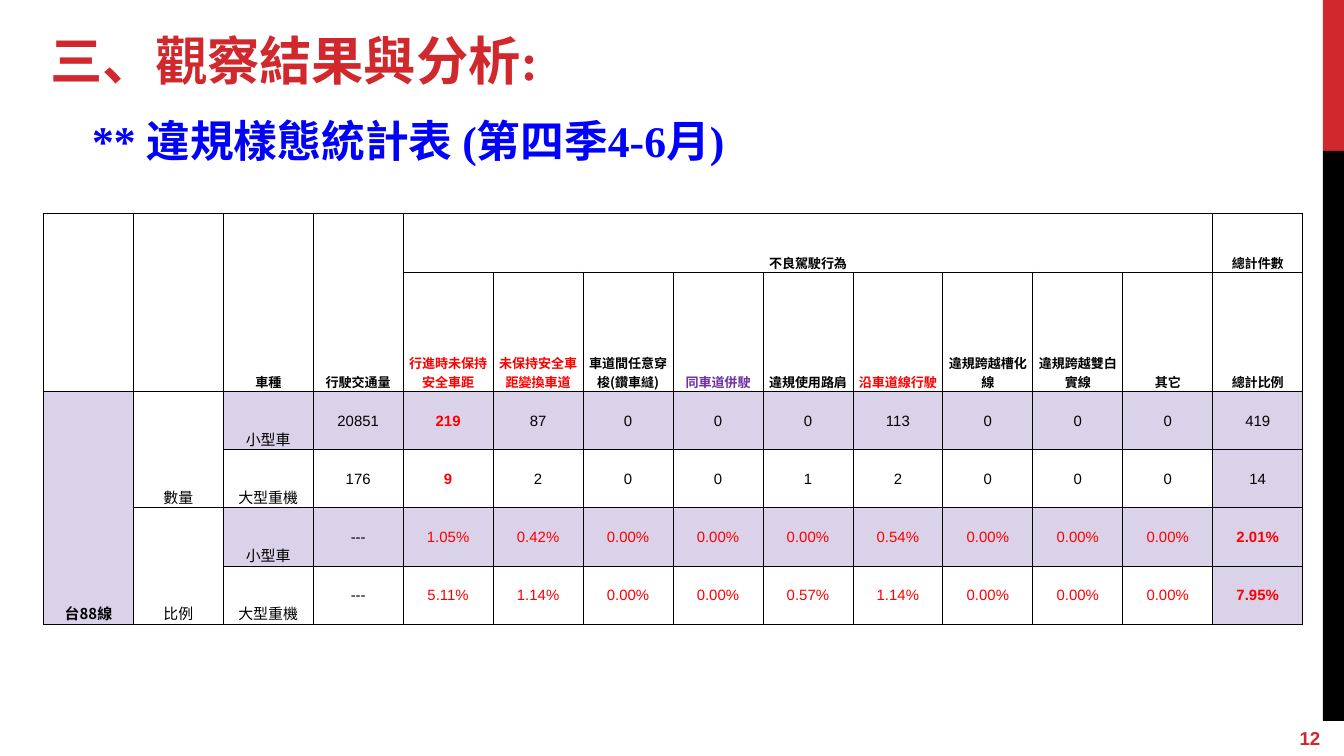
import pptx
import pptx.dml.color
import pptx.enum.shapes
import pptx.enum.text
import pptx.oxml
import pptx.oxml.ns
import pptx.util
from lxml import etree

Cm = pptx.util.Cm
Pt = pptx.util.Pt
Align = pptx.enum.text.PP_ALIGN
Anchor = pptx.enum.text.MSO_ANCHOR
qn = pptx.oxml.ns.qn

RED, BLUE, BLACK, WHITE = "D1282E", "0000FF", "000000", "FFFFFF"
ALERT, PURPLE, LILAC = "FF0000", "7030A0", "D9D2E9"
HAN, SERIF, SANS = "Noto Sans CJK TC", "Times New Roman", "Arial"

HEADS = [
    ["", "", "車種", "行駛交通量", "不良駕駛行為"] + [""] * 8 + ["總計件數"],
    [""] * 4 + ["行進時未保持安全車距", "未保持安全車距變換車道",
                "車道間任意穿梭(鑽車縫)", "同車道併駛", "違規使用路肩",
                "沿車道線行駛", "違規跨越槽化線", "違規跨越雙白實線",
                "其它", "總計比例"],
]
BODY = [
    ["台88線", "數量", "小型車"] + "20851 219 87 0 0 0 113 0 0 0 419".split(),
    ["", "", "大型重機"] + "176 9 2 0 0 1 2 0 0 0 14".split(),
    ["", "比例", "小型車"]
    + "--- 1.05% 0.42% 0.00% 0.00% 0.00% 0.54% 0.00% 0.00% 0.00% 2.01%".split(),
    ["", "", "大型重機"]
    + "--- 5.11% 1.14% 0.00% 0.00% 0.57% 1.14% 0.00% 0.00% 0.00% 7.95%".split(),
]
SPANS = [(0, c, 1, c) for c in range(4)] + [
    (0, 4, 0, 12), (2, 0, 5, 0), (2, 1, 3, 1), (4, 1, 5, 1)]
TINTS = {4: ALERT, 5: ALERT, 7: PURPLE, 9: ALERT}
LAST = 13


def shade(code):
    return pptx.dml.color.RGBColor.from_string(code)


def write(frame, text, size=8, font=HAN, color=BLACK, bold=False,
          align=Align.LEFT):
    para = frame.paragraphs[0]
    para.alignment = align
    run = para.add_run()
    run.text = text
    run.font.size = Pt(size)
    run.font.name = font
    run.font.bold = bold
    run.font.color.rgb = shade(color)
    east = etree.SubElement(run.font._element, qn("a:ea"))
    east.set("typeface", HAN)
    return para


def edge(cell):
    props = cell._tc.get_or_add_tcPr()
    for side in "LRTB":
        line = etree.SubElement(props, qn(f"a:ln{side}"), w=str(Pt(0.5)))
        fill = etree.SubElement(line, qn("a:solidFill"))
        etree.SubElement(fill, qn("a:srgbClr"), val=BLACK)


def style(row, col):
    if row < 2:
        color = TINTS.get(col, BLACK) if row else BLACK
        return dict(size=7, bold=True, color=color)
    count = row < 4
    key = col == (4 if count else LAST)
    red = col == 4 or (not count and col > 3)
    return dict(font=SANS if col > 2 else HAN, bold=key or col == 0,
                color=ALERT if red else BLACK)


def tinted(row, col):
    return row > 1 and (col in (0, LAST) or (row % 2 == 0 and col > 1))


class Deck:
    def __init__(self, wide, high):
        self.file = pptx.Presentation()
        self.file.slide_width = Cm(wide)
        self.file.slide_height = Cm(high)
        self.slide = self.file.slides.add_slide(self.file.slide_layouts[5])

    def frame(self, shape, anchor=Anchor.TOP):
        frame = shape.text_frame
        frame.word_wrap = True
        frame.auto_size = pptx.enum.text.MSO_AUTO_SIZE.NONE
        frame.vertical_anchor = anchor
        frame.margin_left = frame.margin_right = Cm(0.25)
        frame.margin_top = frame.margin_bottom = Cm(0.25)
        return frame

    def title(self, text, x, y, w, h, **form):
        shape = self.slide.shapes.title
        shape.left, shape.top = Cm(x), Cm(y)
        shape.width, shape.height = Cm(w), Cm(h)
        write(self.frame(shape), text, **form)

    def label(self, text, x, y, w, h, **form):
        shape = self.slide.shapes.add_textbox(Cm(x), Cm(y), Cm(w), Cm(h))
        return write(self.frame(shape), text, **form)

    def block(self, x, y, w, h, fill):
        shape = self.slide.shapes.add_shape(
            pptx.enum.shapes.MSO_SHAPE.RECTANGLE, Cm(x), Cm(y), Cm(w), Cm(h))
        shape.shadow.inherit = False
        shape.fill.solid()
        shape.fill.fore_color.rgb = shade(fill)
        shape.line.fill.background()
        return shape

    def table(self, data, x, y, wide, highs):
        cols = len(data[0])
        table = self.slide.shapes.add_table(
            len(data), cols, Cm(x), Cm(y), Cm(wide * cols),
            Cm(sum(highs))).table
        table.first_row = table.horz_banding = False
        for col in table.columns:
            col.width = Cm(wide)
        for row, high in zip(table.rows, highs):
            row.height = Cm(high)
        for r, line in enumerate(data):
            for c, text in enumerate(line):
                self.cell(table.cell(r, c), text, r, c)
        for top, left, low, right in SPANS:
            table.cell(top, left).merge(table.cell(low, right))

    def cell(self, cell, text, row, col):
        edge(cell)
        cell.fill.solid()
        cell.fill.fore_color.rgb = shade(LILAC if tinted(row, col) else WHITE)
        cell.margin_left = cell.margin_right = cell.margin_top = Cm(0.02)
        cell.margin_bottom = 0
        number = row > 1 and col > 2
        cell.vertical_anchor = Anchor.MIDDLE if number else Anchor.BOTTOM
        if text:
            write(cell.text_frame, text, align=Align.CENTER, **style(row, col))


def main():
    deck = Deck(25.4, 14.28)
    deck.block(25, 0, 0.4, 2.85, RED)
    deck.block(25, 2.85, 0.4, 10.77, BLACK)
    page = deck.block(24.31, 13.62, 1.09, 0.66, WHITE)
    write(deck.frame(page, Anchor.MIDDLE), "12", size=10, font=SANS,
          color=RED, bold=True)
    para = deck.label("** 違規樣態統計表 (第四季4-6月)", 0.66, 1.9, 23.67, 1.6,
                      size=23.4, font=SERIF, color=BLUE, bold=True)
    para._p.get_or_add_pPr().set("marL", str(Cm(0.83)))
    deck.title("三、觀察結果與分析:", 0.71, 0.28, 23.62, 1.6,
               size=28, font=SERIF, color=RED, bold=True)
    deck.table(HEADS + BODY, 0.82, 4.04, 1.7, [1.1, 2.25] + [1.1] * 4)
    deck.file.save("out.pptx")


if __name__ == "__main__":
    main()
